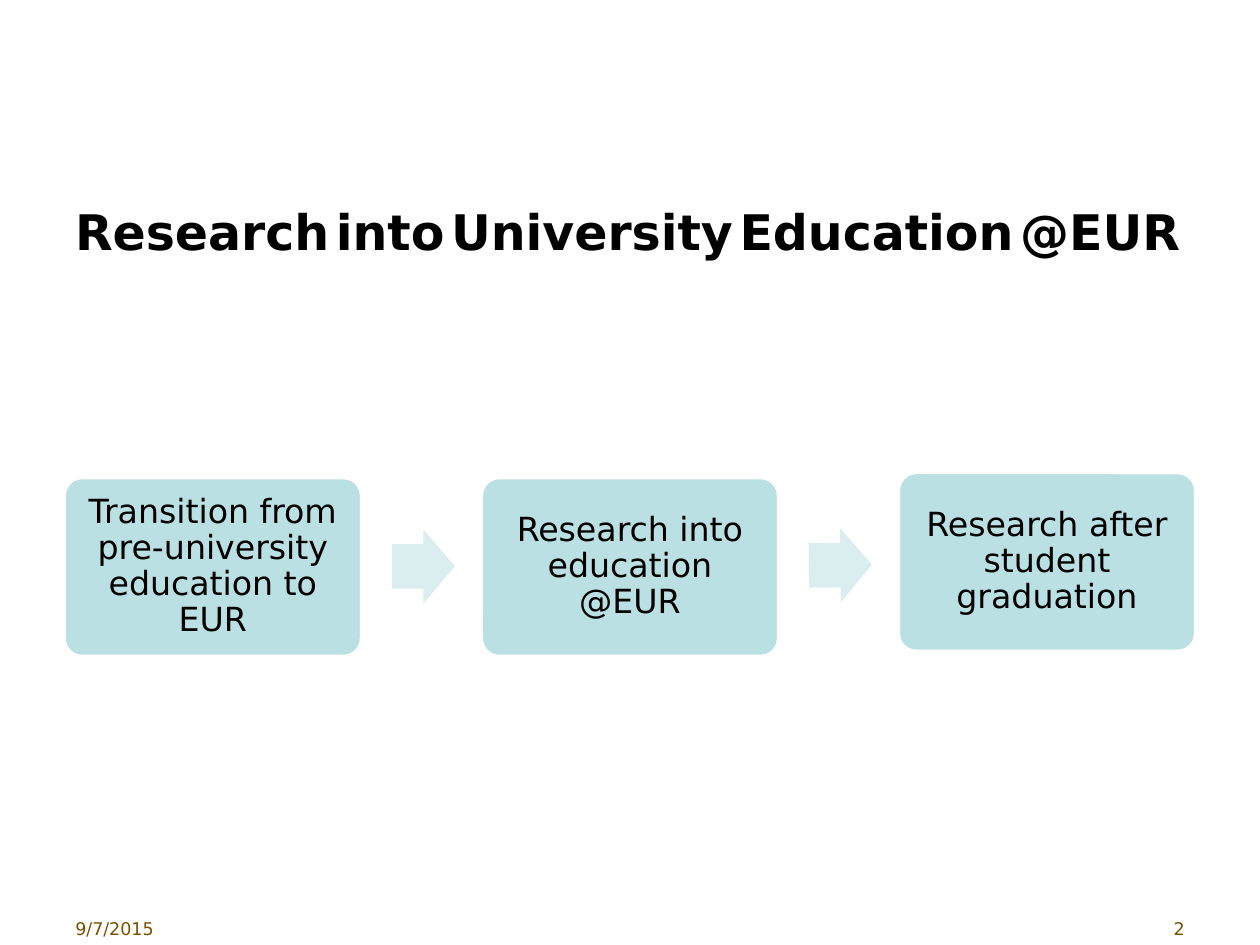
"""Build the slide on research into university education."""
from pptx import Presentation
from pptx.dml.color import RGBColor
from pptx.enum.shapes import MSO_SHAPE
from pptx.enum.text import MSO_ANCHOR, PP_ALIGN
from pptx.util import Inches, Pt

ROUND, ARROW = MSO_SHAPE.ROUNDED_RECTANGLE, MSO_SHAPE.RIGHT_ARROW
LEFT, CENTER, RIGHT = PP_ALIGN.LEFT, PP_ALIGN.CENTER, PP_ALIGN.RIGHT
MIDDLE = MSO_ANCHOR.MIDDLE
FONT = "DejaVu Sans"

TITLE = ["Research", "into", "University", "Education", "@EUR"]
STEPS = [
    ("Transition from pre-university education to EUR", 3.79),
    ("Research into education @EUR", 3.79),
    ("Research after student graduation", 3.75),
]
ARROWS = [(4.2, 0), (4.19, 359.3)]
FOOTERS = [("9/7/2015", 0.5, 2.33, LEFT), ("2", 7.05, 2.45, RIGHT)]
STEP_LEFT, STEP_PITCH, STEP_W, STEP_H = 0.51, 3.31, 2.36, 1.42
ARROW_OFFSET, ARROW_W, ARROW_H = 2.6, 0.5, 0.59


def color(value):
    return RGBColor.from_string(value)


def style(r, size, fill, bold=False):
    r.font.name, r.font.size, r.font.bold = FONT, Pt(size), bold
    r.font.color.rgb = color(fill)


def add_text(s, x, y, w, h, align):
    tf = s.shapes.add_textbox(Inches(x), Inches(y), Inches(w), Inches(h)).text_frame
    tf.word_wrap = True
    p = tf.paragraphs[0]
    p.alignment = align
    return p


def add_block(s, kind, x, y, w, h, fill, adjustments):
    sp = s.shapes.add_shape(kind, Inches(x), Inches(y), Inches(w), Inches(h))
    sp.shadow.inherit = False
    sp.fill.solid()
    sp.fill.fore_color.rgb = color(fill)
    sp.line.fill.background()
    for i, value in enumerate(adjustments):
        sp.adjustments[i] = value
    return sp


def add_step(s, text, x, y):
    sp = add_block(s, ROUND, x, y, STEP_W, STEP_H, "BBE0E3", [0.1])
    sp.line.color.rgb = color("FFFFFF")
    sp.line.width = Pt(2)
    tf = sp.text_frame
    tf.text = text
    tf.word_wrap = True
    tf.vertical_anchor = MIDDLE
    tf.margin_left = tf.margin_right = Inches(0.1)
    tf.margin_top = tf.margin_bottom = Inches(0.1)
    p = tf.paragraphs[0]
    p.alignment, p.line_spacing = CENTER, 0.9
    style(p.runs[0], 19, "000000")


def add_title(s):
    p = add_text(s, 0.04, 1.55, 9.88, 0.57, CENTER)
    for i, word in enumerate(TITLE):
        if i:
            r = p.add_run()
            r.text = " "
            style(r, 12, "000000")
        r = p.add_run()
        r.text = word
        style(r, 28, "000000", True)


def main():
    prs = Presentation()
    prs.slide_width, prs.slide_height = Inches(10), Inches(7.5)
    s = prs.slides.add_slide(prs.slide_layouts[6])
    for i, (text, y) in enumerate(STEPS):
        add_step(s, text, STEP_LEFT + i * STEP_PITCH, y)
    for i, (y, angle) in enumerate(ARROWS):
        x = STEP_LEFT + ARROW_OFFSET + i * STEP_PITCH
        sp = add_block(s, ARROW, x, y, ARROW_W, ARROW_H, "DAEDEF", [0.6, 0.5])
        sp.rotation = angle
    for text, x, w, align in FOOTERS:
        p = add_text(s, x, 7.24, w, 0.22, align)
        p.text = text
        style(p.runs[0], 10, "785100")
    add_title(s)
    prs.save("out.pptx")


if __name__ == "__main__":
    main()
